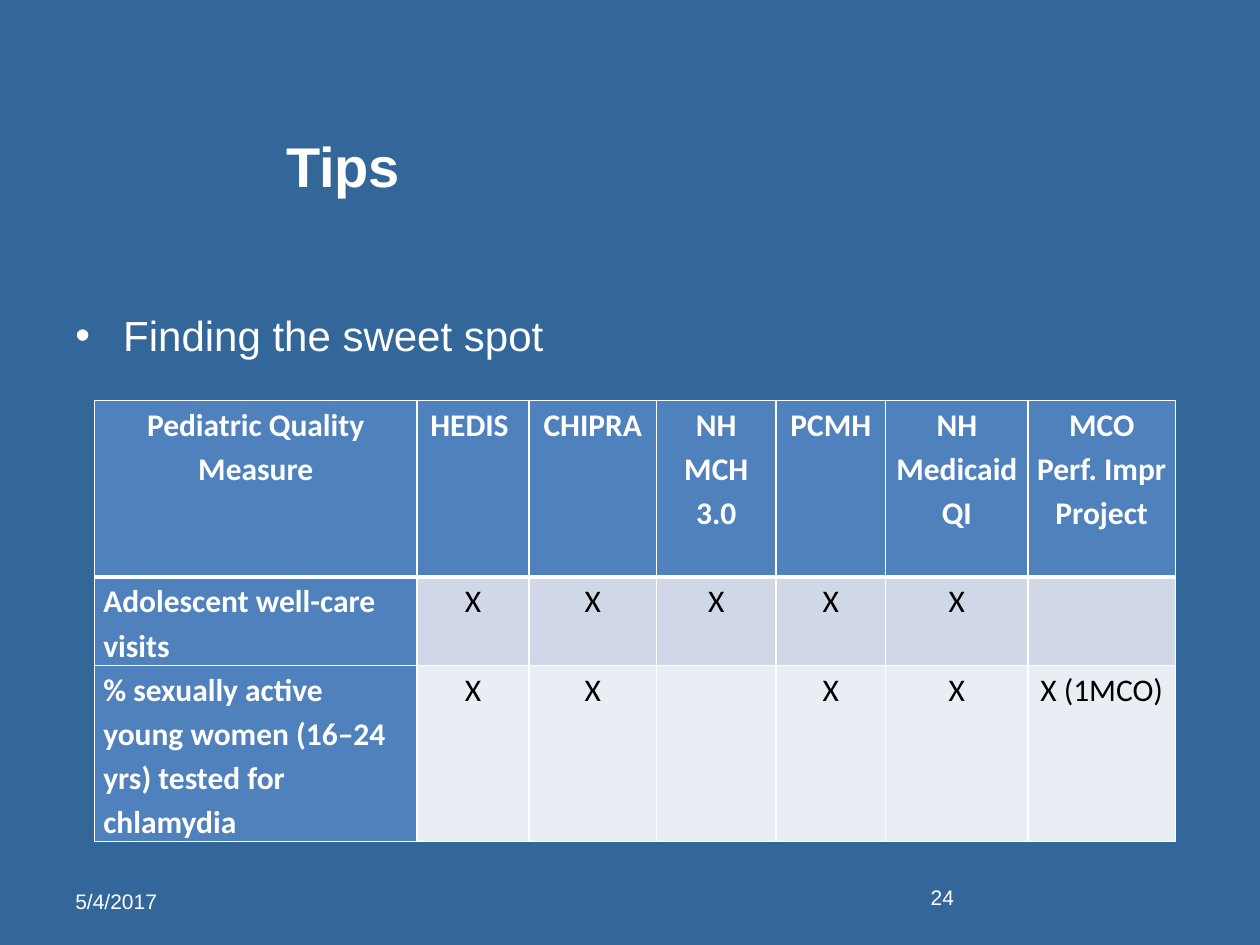
from lxml.etree import SubElement
from pptx import Presentation
from pptx.dml.color import RGBColor
from pptx.enum.text import MSO_ANCHOR, PP_ALIGN
from pptx.oxml.ns import qn
from pptx.util import Inches, Pt

COLORS = {
    "background": "336699",
    "white": "FFFFFF",
    "black": "000000",
    "header": "4F81BD",
    "band_dark": "D0D8E8",
    "band_light": "E9EDF4",
}
COLUMN_WIDTHS = [2.56, 0.89, 1.01, 0.95, 0.87, 1.13, 1.17]
ROW_HEIGHTS = [1.4, 0.7, 1.4]
MEASURES = [
    ["Pediatric Quality Measure", "HEDIS ", "CHIPRA", "NH MCH 3.0", "PCMH",
     "NH Medicaid QI", "MCO Perf. Impr Project"],
    ["Adolescent well-care visits", "X", "X", "X", "X", "X", ""],
    ["% sexually active young women (16–24 yrs) tested for chlamydia",
     "X", "X", "", "X", "X", "X (1MCO)"],
]


def color(name):
    """Return the named palette colour."""
    return RGBColor.from_string(COLORS[name])


def add_run(paragraph, text, size, font="Arial", fill="white", bold=False):
    """Append one formatted run to a paragraph."""
    run = paragraph.add_run()
    run.text = text
    run.font.name = font
    run.font.size = Pt(size)
    run.font.bold = bold
    run.font.color.rgb = color(fill)


def place_title(slide, left, top, width, height):
    """Move and format the title placeholder."""
    title = slide.shapes.title
    title.left, title.top = Inches(left), Inches(top)
    title.width, title.height = Inches(width), Inches(height)
    title.text_frame.vertical_anchor = MSO_ANCHOR.TOP
    paragraph = title.text_frame.paragraphs[0]
    paragraph.alignment = PP_ALIGN.LEFT
    add_run(paragraph, "Tips", 32, bold=True)


def add_text(slide, box, text, size, alignment=PP_ALIGN.LEFT, anchor=MSO_ANCHOR.TOP):
    """Add a wrapped text box and return its paragraph."""
    frame = slide.shapes.add_textbox(*map(Inches, box)).text_frame
    frame.word_wrap = True
    frame.vertical_anchor = anchor
    paragraph = frame.paragraphs[0]
    paragraph.alignment = alignment
    add_run(paragraph, text, size)
    return paragraph


def add_bullet(paragraph, indent):
    """Give a paragraph a round bullet with a hanging indent."""
    properties = paragraph._p.get_or_add_pPr()
    properties.set("marL", str(Inches(indent)))
    properties.set("indent", str(-Inches(indent)))
    SubElement(properties, qn("a:buFont"), typeface="Arial")
    SubElement(properties, qn("a:buChar"), char="•")


def set_borders(cell, bottom_width):
    """Draw white borders around a cell."""
    properties = cell._tc.get_or_add_tcPr()
    widths = {"a:lnL": 1, "a:lnR": 1, "a:lnT": 1, "a:lnB": bottom_width}
    for position, (tag, width) in enumerate(widths.items()):
        line = SubElement(properties, qn(tag), w=str(Pt(width)))
        fill = SubElement(line, qn("a:solidFill"))
        SubElement(fill, qn("a:srgbClr"), val=COLORS["white"])
        properties.remove(line)
        properties.insert(position, line)


def format_cell(cell, text, row, column):
    """Fill one table cell according to its row and column."""
    heading = row == 0 or column == 0
    band = "band_dark" if row % 2 else "band_light"
    cell.fill.solid()
    cell.fill.fore_color.rgb = color("header" if heading else band)
    set_borders(cell, 3 if row == 0 else 1)
    if not text:
        return
    cell.margin_left = cell.margin_right = Inches(0.07)
    cell.margin_top = cell.margin_bottom = 0
    paragraph = cell.text_frame.paragraphs[0]
    row_label = row > 0 and column == 0
    paragraph.alignment = PP_ALIGN.LEFT if row_label else PP_ALIGN.CENTER
    paragraph.line_spacing = 1.15
    paragraph.space_after = Pt(10)
    add_run(paragraph, text, 18, "Calibri", "white" if heading else "black", heading)


def add_measures_table(slide, left, top):
    """Add the table of quality measures by programme."""
    table = slide.shapes.add_table(
        len(ROW_HEIGHTS), len(COLUMN_WIDTHS), Inches(left), Inches(top),
        Inches(sum(COLUMN_WIDTHS)), Inches(sum(ROW_HEIGHTS))).table
    for column, width in zip(table.columns, COLUMN_WIDTHS):
        column.width = Inches(width)
    for row, height in zip(table.rows, ROW_HEIGHTS):
        row.height = Inches(height)
    for row, texts in enumerate(MEASURES):
        for column, text in enumerate(texts):
            format_cell(table.cell(row, column), text, row, column)


def add_footer(slide, left, top):
    """Add the date and the slide number."""
    add_text(slide, (left, top, 2.33, 0.4), "5/4/2017", 12, anchor=MSO_ANCHOR.MIDDLE)
    add_text(slide, (left + 6.23, top + 0.02, 0.94, 0.3), "24", 12, PP_ALIGN.RIGHT)


def main():
    """Build and save the slide."""
    presentation = Presentation()
    presentation.slide_width, presentation.slide_height = Inches(10), Inches(7.5)
    slide = presentation.slides.add_slide(presentation.slide_layouts[5])
    slide.background.fill.solid()
    slide.background.fill.fore_color.rgb = color("background")
    place_title(slide, 2.17, 0.99, 7.41, 1.25)
    add_bullet(add_text(slide, (0.5, 2.41, 9, 4.29), "Finding the sweet spot", 24), 0.38)
    add_measures_table(slide, 0.75, 3.18)
    add_footer(slide, 0.5, 6.95)
    presentation.save("out.pptx")


if __name__ == "__main__":
    main()
